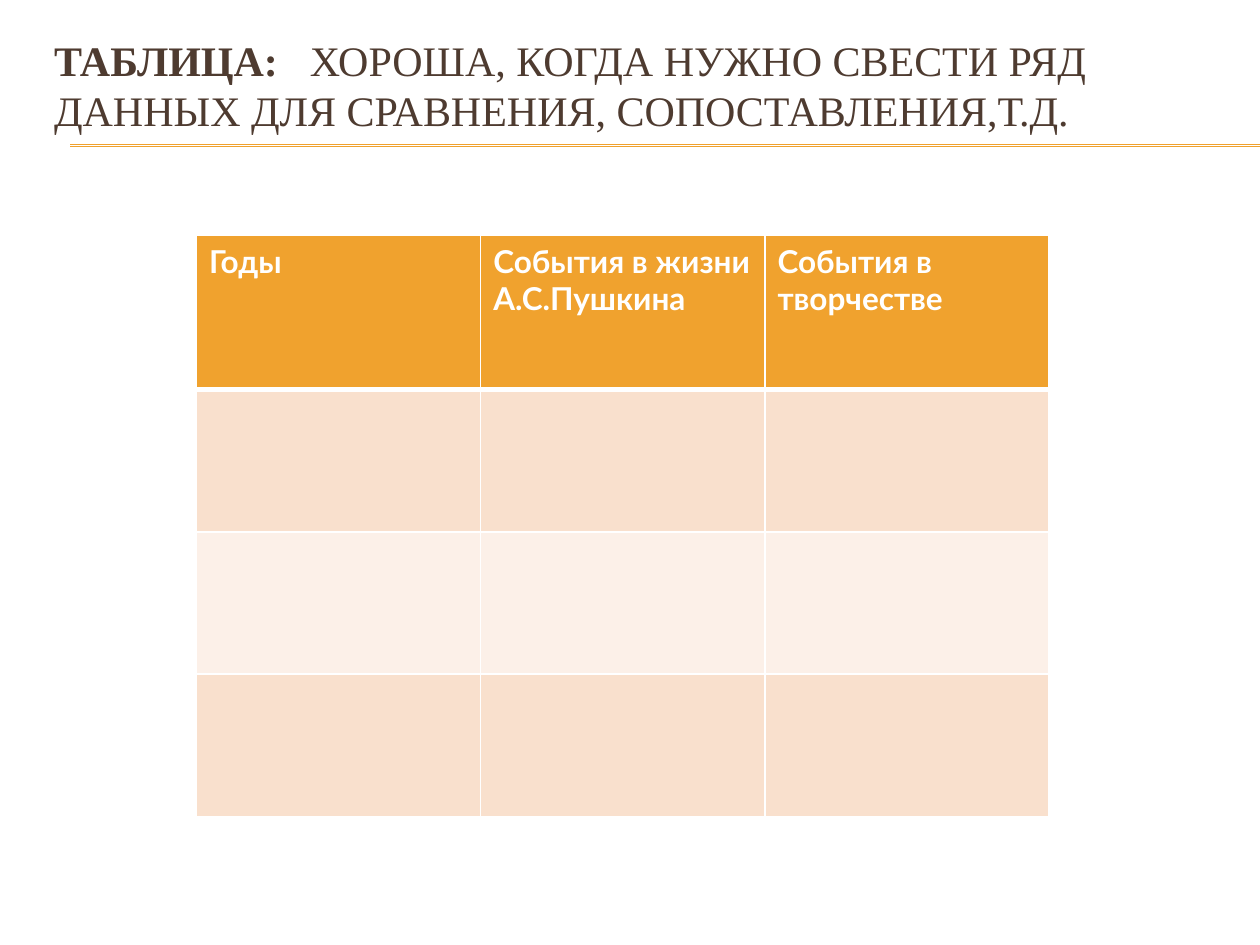
from lxml import etree
from pptx import Presentation
from pptx import util as u
from pptx.dml.color import RGBColor
from pptx.enum import shapes, text
from pptx.oxml import ns

COLOURS = {
    "accent": "F0A22E",
    "title": "4E3B30",
    "white": "FFFFFF",
    "band_dark": "F9E0CD",
    "band_light": "FCF0E8",
}
HEADERS = ["Годы", "События в жизни А.С.Пушкина", "События в творчестве"]
ROW_HEIGHTS = [3.1, 2.87, 2.87, 2.87]
ROW_FILLS = ["accent", "band_dark", "band_light", "band_dark"]
COLUMN_WIDTH = 5.73


def rgb(name):
    """Return the named colour of the palette."""
    return RGBColor.from_string(COLOURS[name])


def style(font, face, size, colour, bold):
    """Set face, size, colour and weight of a font."""
    font.name, font.size, font.bold = face, u.Pt(size), bold
    font.color.rgb = rgb(colour)


def add_rule(slide, y):
    """Draw a thin horizontal rule running to the right slide edge."""
    rule = slide.shapes.add_connector(
        shapes.MSO_CONNECTOR.STRAIGHT, u.Cm(1.42), u.Cm(y), u.Cm(25.4), u.Cm(y))
    rule.line.color.rgb = rgb("accent")
    rule.line.width = u.Pt(0.75)
    etree.SubElement(rule._element.spPr, ns.qn("a:effectLst"))


def add_title(slide, term, statement):
    """Add the heading with a bold term and a tabbed statement."""
    box = slide.shapes.add_textbox(u.Cm(0.84), u.Cm(0.41), u.Cm(24.13), u.Cm(2.59))
    frame = box.text_frame
    frame.word_wrap = True
    frame.vertical_anchor = text.MSO_ANCHOR.MIDDLE
    heading = frame.paragraphs[0]
    tabs = etree.SubElement(heading._p.get_or_add_pPr(), ns.qn("a:tabLst"))
    etree.SubElement(tabs, ns.qn("a:tab"), pos=str(u.Cm(5.16)), algn="l")
    for words, bold in ((term, True), ("\t" + statement, False)):
        run = heading.add_run()
        run.text = words
        style(run.font, "Times New Roman", 24, "title", bold)


def add_borders(cell, bottom):
    """Give a cell white borders with the given bottom width in points."""
    properties = cell._tc.get_or_add_tcPr()
    for side, width in (("L", 1), ("R", 1), ("T", 1), ("B", bottom)):
        border = etree.SubElement(
            properties, ns.qn(f"a:ln{side}"), w=str(u.Pt(width)))
        fill = etree.SubElement(border, ns.qn("a:solidFill"))
        etree.SubElement(fill, ns.qn("a:srgbClr"), val=COLOURS["white"])


def add_events_table(slide):
    """Add the table of years and events with empty banded rows."""
    events = slide.shapes.add_table(
        len(ROW_HEIGHTS), len(HEADERS), u.Cm(3.96), u.Cm(4.75),
        u.Cm(COLUMN_WIDTH * len(HEADERS)), u.Cm(sum(ROW_HEIGHTS))).table
    for column in events.columns:
        column.width = u.Cm(COLUMN_WIDTH)
    for index, (row, height, fill) in enumerate(
            zip(events.rows, ROW_HEIGHTS, ROW_FILLS)):
        row.height = u.Cm(height)
        for cell in row.cells:
            add_borders(cell, 3 if index == 0 else 1)
            cell.fill.solid()
            cell.fill.fore_color.rgb = rgb(fill)
    for cell, header in zip(events.rows[0].cells, HEADERS):
        cell.text_frame.text = header
        style(cell.text_frame.paragraphs[0].runs[0].font, "Lato", 18, "white", True)


def main():
    """Build the slide and save the presentation."""
    deck = Presentation()
    deck.slide_width, deck.slide_height = u.Cm(25.4), u.Cm(19.05)
    slide = deck.slides.add_slide(deck.slide_layouts[6])
    for y in (2.92, 2.95):
        add_rule(slide, y)
    add_title(slide, "ТАБЛИЦА:",
              "ХОРОША, КОГДА НУЖНО СВЕСТИ РЯД ДАННЫХ ДЛЯ СРАВНЕНИЯ, "
              "СОПОСТАВЛЕНИЯ,Т.Д.")
    add_events_table(slide)
    deck.save("out.pptx")


if __name__ == "__main__":
    main()
